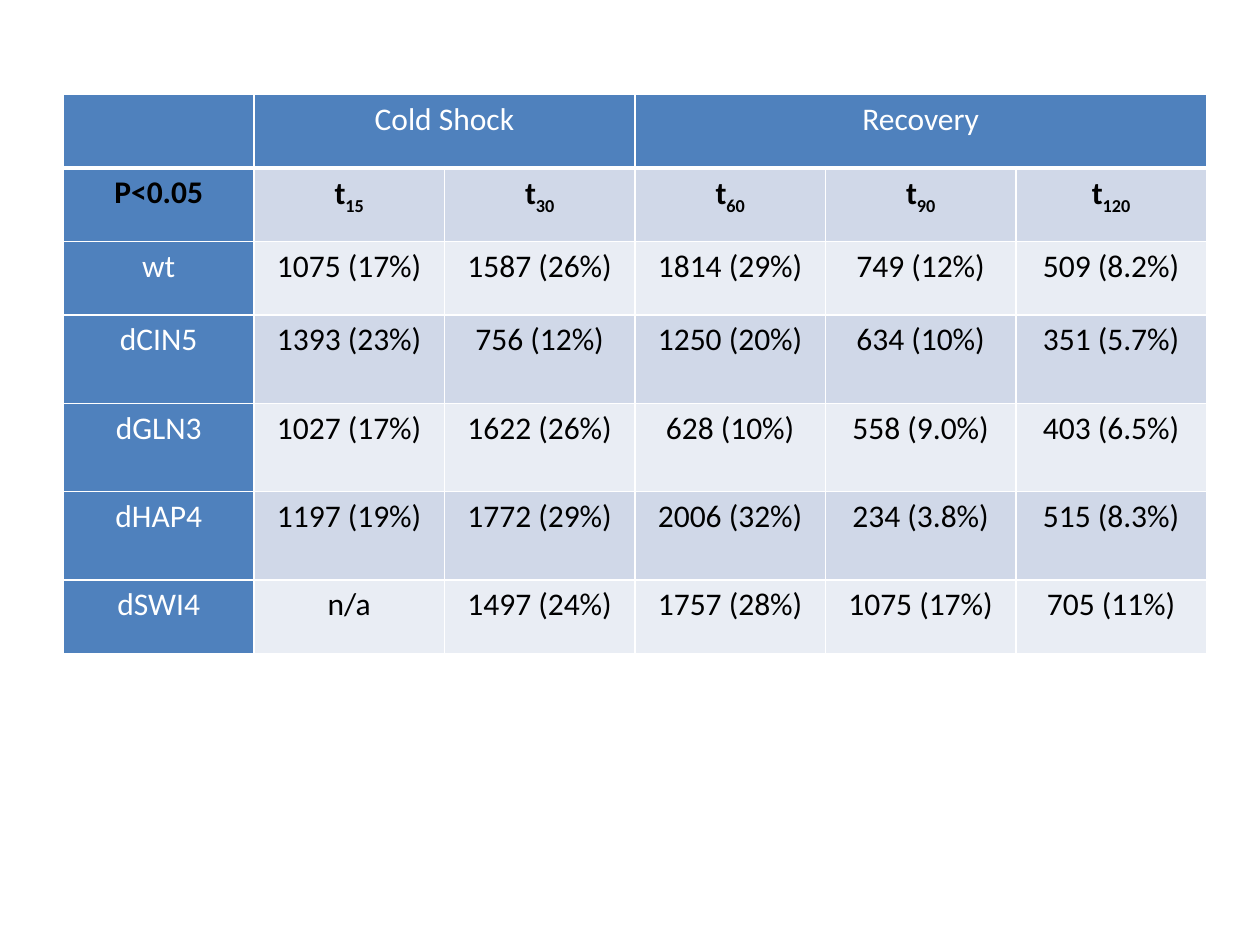
from dataclasses import dataclass

from lxml import etree
from pptx import Presentation
from pptx.dml.color import RGBColor
from pptx.enum.text import PP_ALIGN
from pptx.oxml.ns import qn
from pptx.table import Table, _Cell
from pptx.util import Cm, Pt

CENTER = PP_ALIGN.CENTER
WHITE = RGBColor(0xFF, 0xFF, 0xFF)
BLACK = RGBColor(0x00, 0x00, 0x00)
BLUE = RGBColor(0x4F, 0x81, 0xBD)
BAND_DARK = RGBColor(0xD0, 0xD8, 0xE8)
BAND_LIGHT = RGBColor(0xE9, 0xED, 0xF4)

COLUMN_WIDTH = Cm(3.84)
ROW_HEIGHT = Cm(1.48)
TALL_ROW_HEIGHT = Cm(1.78)
TALL_STRAINS = ("dCIN5", "dGLN3", "dHAP4")
TIMES = ("15", "30", "60", "90", "120")
MARGINS = {"margin_left": Cm(0.18), "margin_right": Cm(0.18),
           "margin_top": Cm(0), "margin_bottom": Cm(0)}


@dataclass(frozen=True)
class Phase:
    name: str
    first_column: int
    last_column: int


@dataclass(frozen=True)
class Strain:
    name: str
    counts: tuple[str, ...]


PHASES = (Phase("Cold Shock", 1, 2), Phase("Recovery", 3, 5))
STRAINS = (
    Strain("wt", ("1075 (17%)", "1587 (26%)", "1814 (29%)", "749 (12%)", "509 (8.2%)")),
    Strain("dCIN5", ("1393 (23%)", "756 (12%)", "1250 (20%)", "634 (10%)", "351 (5.7%)")),
    Strain("dGLN3", ("1027 (17%)", "1622 (26%)", "628 (10%)", "558 (9.0%)", "403 (6.5%)")),
    Strain("dHAP4", ("1197 (19%)", "1772 (29%)", "2006 (32%)", "234 (3.8%)", "515 (8.3%)")),
    Strain("dSWI4", ("n/a", "1497 (24%)", "1757 (28%)", "1075 (17%)", "705 (11%)")),
)


def format_cell(cell: _Cell, fill: RGBColor, bottom_width: int = 1) -> None:
    """Set margins, white borders and fill; borders come before the fill in the XML."""
    for name, value in MARGINS.items():
        setattr(cell, name, value)
    properties = cell._tc.get_or_add_tcPr()
    for side, width in {"L": 1, "R": 1, "T": 1, "B": bottom_width}.items():
        line = etree.SubElement(properties, qn(f"a:ln{side}"), w=str(Pt(width)))
        solid = etree.SubElement(line, qn("a:solidFill"))
        etree.SubElement(solid, qn("a:srgbClr"), val=str(WHITE))
    cell.fill.solid()
    cell.fill.fore_color.rgb = fill


def write_cell(cell: _Cell, text: str, color: RGBColor, bold: bool = False,
               subscript: str = "") -> None:
    para = cell.text_frame.paragraphs[0]
    para.alignment = CENTER
    para.line_spacing = 1.15
    for part in filter(None, (text, subscript)):
        span = para.add_run()
        span.text = part
        font_format = {"name": "Calibri", "size": Pt(18), "bold": bold}
        for name, value in font_format.items():
            setattr(span.font, name, value)
        span.font.color.rgb = color
    if subscript:
        span._r.get_or_add_rPr().set("baseline", "-25000")


def fill_headers(table: Table) -> None:
    for column in range(len(table.columns)):
        format_cell(table.cell(0, column), BLUE, bottom_width=3)
        format_cell(table.cell(1, column), BAND_DARK if column else BLUE)
    for phase in PHASES:
        heading = table.cell(0, phase.first_column)
        heading.merge(table.cell(0, phase.last_column))
        write_cell(heading, phase.name, WHITE)
    write_cell(table.cell(1, 0), "P<0.05", BLACK, bold=True)
    for column, time in enumerate(TIMES, start=1):
        write_cell(table.cell(1, column), "t", BLACK, bold=True, subscript=time)


def fill_strain(table: Table, row: int, strain: Strain) -> None:
    band = BAND_DARK if row % 2 else BAND_LIGHT
    for column, text in enumerate((strain.name, *strain.counts)):
        cell = table.cell(row, column)
        format_cell(cell, band if column else BLUE)
        write_cell(cell, text, BLACK if column else WHITE)
    if strain.name in TALL_STRAINS:
        table.rows[row].height = TALL_ROW_HEIGHT


def main() -> None:
    deck = Presentation()
    deck.slide_width, deck.slide_height = Cm(25.4), Cm(19.05)
    page = deck.slides.add_slide(deck.slide_layouts[6])

    row_count, column_count = len(STRAINS) + 2, len(TIMES) + 1
    table = page.shapes.add_table(
        row_count, column_count, Cm(1.28), Cm(1.91),
        COLUMN_WIDTH * column_count, ROW_HEIGHT * row_count).table
    table.first_row = table.horz_banding = False
    for column in table.columns:
        column.width = COLUMN_WIDTH
    for row in table.rows:
        row.height = ROW_HEIGHT

    fill_headers(table)
    for row, strain in enumerate(STRAINS, start=2):
        fill_strain(table, row, strain)
    deck.save("out.pptx")


if __name__ == "__main__":
    main()
